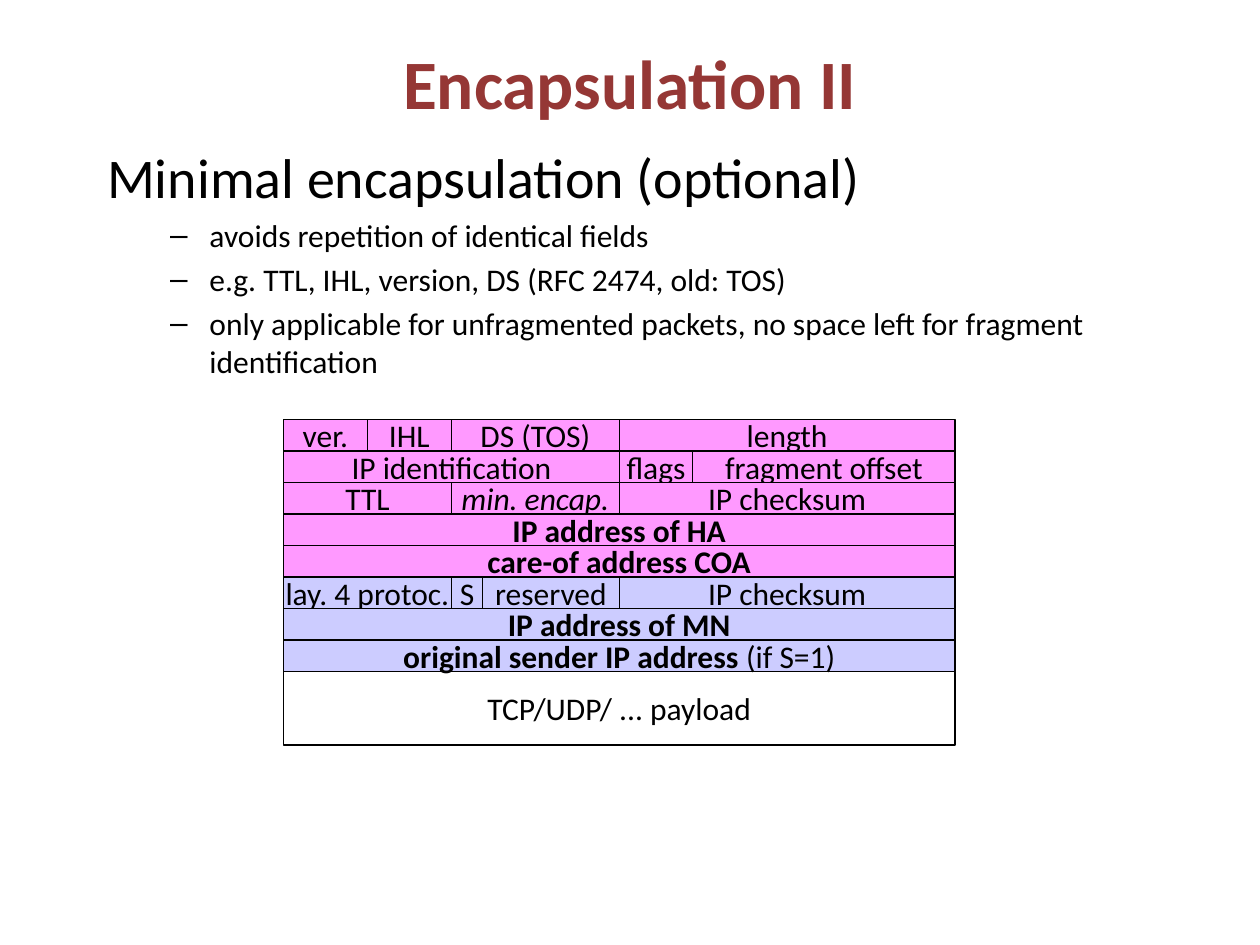
from lxml.etree import SubElement
from pptx import Presentation
from pptx.dml.color import RGBColor
from pptx.enum.shapes import MSO_SHAPE
from pptx.enum.text import MSO_ANCHOR, MSO_AUTO_SIZE, PP_ALIGN
from pptx.oxml.ns import qn
from pptx.util import Inches, Pt

PINK, LILAC = "FF99FF", "CCCCFF"
BITS = 32
ROW_H = 0.25
BULLETS = [
    "avoids repetition of identical fields",
    "e.g. TTL, IHL, version, DS (RFC 2474, old: TOS)",
    "only applicable for unfragmented packets, no space left for fragment identification",
]
HEADER_ROWS = [
    (PINK, 1, [("ver.", 4, ""), ("IHL", 4, ""), ("DS (TOS)", 8, ""), ("length", 16, "")]),
    (PINK, 1, [("IP identification", 16, ""), ("flags", 3.5, ""), ("fragment offset", 12.5, "")]),
    (PINK, 1, [("TTL", 8, ""), ("min. encap.", 8, "i"), ("IP checksum", 16, "")]),
    (PINK, 1, [("IP address of HA", 32, "b")]),
    (PINK, 1, [("care-of address COA", 32, "b")]),
    (LILAC, 1, [("lay. 4 protoc.", 8, ""), ("S", 1.5, ""), ("reserved", 6.5, ""),
                ("IP checksum", 16, "")]),
    (LILAC, 1, [("IP address of MN", 32, "b")]),
    (LILAC, 1, [("original sender IP address |(if S=1)", 32, "b")]),
    (None, 7 / 3, [("TCP/UDP/ ... payload", 32, "")]),
]


def rgb(value):
    """Return the colour for a hex string."""
    return RGBColor.from_string(value)


def format_run(r, size, color="000000", bold=False, italic=False):
    """Set the font of a run."""
    r.font.name, r.font.size = "Calibri", Pt(size)
    r.font.bold, r.font.italic = bold, italic
    r.font.color.rgb = rgb(color)


def place(sp, left, top, width, height):
    """Move a placeholder to a box given in inches."""
    sp.left, sp.top = Inches(left), Inches(top)
    sp.width, sp.height = Inches(width), Inches(height)
    sp.text_frame.auto_size = MSO_AUTO_SIZE.NONE


def add_title(s, left, top, width, height):
    """Fill the title placeholder."""
    sp = s.shapes.title
    place(sp, left, top, width, height)
    sp.text_frame.text = "Encapsulation II"
    format_run(sp.text_frame.paragraphs[0].runs[0], 39.6, "953735", bold=True)


def add_body(s, left, top, width, height):
    """Fill the body placeholder with a heading and its list."""
    sp = s.placeholders[1]
    place(sp, left, top, width, height)
    tf = sp.text_frame
    heading = tf.paragraphs[0]
    heading.text = "Minimal encapsulation (optional)"
    SubElement(heading._p.get_or_add_pPr(), qn("a:buNone"))
    format_run(heading.runs[0], 32)
    for text in BULLETS:
        p = tf.add_paragraph()
        p.text, p.level = text, 1
        format_run(p.runs[0], 18)


def add_field(s, left, top, width, height, text, fill, style):
    """Draw one header field; text after a bar is not bold."""
    sp = s.shapes.add_shape(MSO_SHAPE.RECTANGLE, Inches(left), Inches(top),
                            Inches(width), Inches(height))
    sp.shadow.inherit = False
    if fill:
        sp.fill.solid()
        sp.fill.fore_color.rgb = rgb(fill)
    else:
        sp.fill.background()
    sp.line.color.rgb, sp.line.width = rgb("000000"), Pt(0.75)
    tf = sp.text_frame
    tf.word_wrap, tf.vertical_anchor = False, MSO_ANCHOR.MIDDLE
    p = tf.paragraphs[0]
    p.alignment = PP_ALIGN.CENTER
    for i, part in enumerate(text.split("|")):
        r = p.add_run()
        r.text = part
        format_run(r, 18, bold=style == "b" and i == 0, italic=style == "i")


def add_packet(s, left, top, width):
    """Draw the packet header, each field as wide as its bits."""
    for fill, units, fields in HEADER_ROWS:
        x, height = left, units * ROW_H
        for text, bits, style in fields:
            field_w = width * bits / BITS
            add_field(s, x, top, field_w, height, text, fill, style)
            x += field_w
        top += height


def main():
    """Build the slide and save it."""
    prs = Presentation()
    prs.slide_width, prs.slide_height = Inches(10), Inches(7.5)
    s = prs.slides.add_slide(prs.slide_layouts[1])
    add_title(s, 0.5, 0.3, 9, 0.7)
    add_body(s, 0.75, 1.08, 8.5, 1.92)
    add_packet(s, 2.25, 3.33, 5.33)
    prs.save("out.pptx")


if __name__ == "__main__":
    main()
